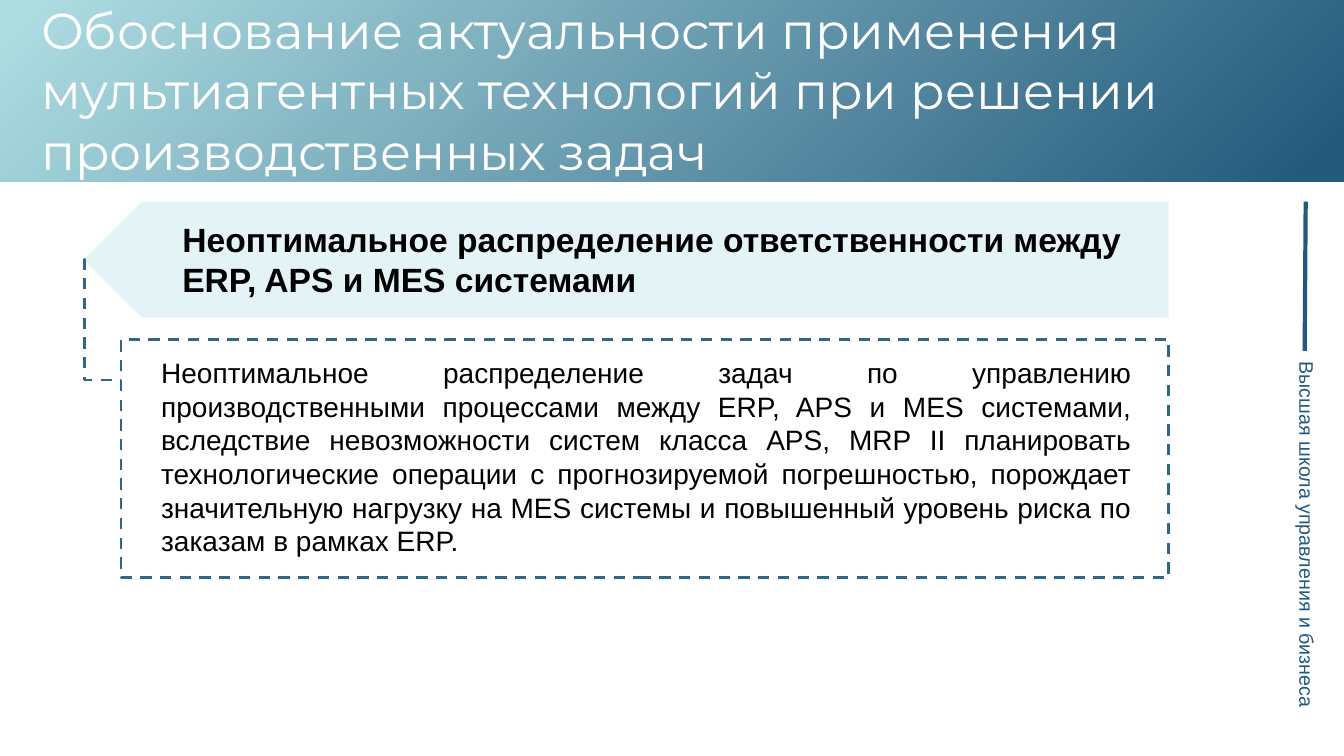
from pptx import Presentation
from pptx.dml.color import RGBColor
from pptx.enum.dml import MSO_LINE
from pptx.enum.shapes import MSO_CONNECTOR, MSO_SHAPE
from pptx.enum.text import MSO_ANCHOR, PP_ALIGN
from pptx.oxml.ns import qn
from pptx.util import Inches, Pt
from lxml.etree import SubElement

NAVY = RGBColor(0x23, 0x59, 0x7B)
BLUE = RGBColor(0x31, 0x66, 0x85)
AQUA = RGBColor(0xAD, 0xDC, 0xE1)
PALE_AQUA = RGBColor(0xAC, 0xDB, 0xE0)
WHITE = RGBColor(0xFF, 0xFF, 0xFF)
BLACK = RGBColor(0, 0, 0)

presentation = Presentation()
presentation.slide_width = Inches(13.33)
presentation.slide_height = Inches(7.5)
slide = presentation.slides.add_slide(presentation.slide_layouts[6])


def add_box(preset, left, top, width, height):
    shape = slide.shapes.add_shape(
        preset, Inches(left), Inches(top), Inches(width), Inches(height))
    shape.shadow.inherit = False
    shape.fill.solid()
    shape.fill.fore_color.rgb = WHITE
    shape.line.fill.background()
    return shape


def write_text(shape, text, size, font, color):
    frame = shape.text_frame
    frame.word_wrap = True
    frame.vertical_anchor = MSO_ANCHOR.TOP
    paragraph = frame.paragraphs[0]
    paragraph.text = text
    paragraph.alignment = PP_ALIGN.LEFT
    paragraph.font.size = Pt(size)
    paragraph.font.name = font
    paragraph.font.color.rgb = color
    return paragraph


banner = add_box(MSO_SHAPE.PENTAGON, 0.83, 2, 10.76, 1.15)
banner.rotation = 180
banner.fill.fore_color.rgb = PALE_AQUA
banner_color = banner.fill._xPr.find(qn("a:solidFill"))[0]
SubElement(banner_color, qn("a:alpha"), val="32000")

frame_box = add_box(MSO_SHAPE.RECTANGLE, 1.2, 3.37, 10.39, 2.36)

header = add_box(MSO_SHAPE.RECTANGLE, 0, 0, 13.33, 1.8)
header.fill.gradient()
header.fill.gradient_angle = 315
for stop, position, color in zip(header.fill.gradient_stops, (0.02, 0.98), (AQUA, NAVY)):
    stop.position = position
    stop.color.rgb = color

side_label = add_box(MSO_SHAPE.RECTANGLE, 11.1, 5.18, 3.72, 0.34)
side_label.rotation = 90
write_text(side_label, "Высшая школа управления и бизнеса", 14, "Arial", NAVY)

text_boxes = [
    (0.31, -0.06, 13.33, 1.92, 36, "Montserrat", WHITE,
     "Обоснование актуальности применения мультиагентных технологий "
     "при решении производственных задач"),
    (1.2, 3.48, 10.12, 2.12, 20, "Arial", BLACK,
     "Неоптимальное распределение задач по управлению производственными "
     "процессами между ERP, APS и MES системами, вследствие невозможности "
     "систем класса APS, MRP II планировать технологические операции с "
     "прогнозируемой погрешностью, порождает значительную нагрузку на MES "
     "системы и повышенный уровень риска по заказам в рамках ERP."),
    (1.71, 2.12, 9.62, 0.91, 24, "Arial", BLACK,
     "Неоптимальное распределение ответственности между ERP, APS и MES системами"),
]
paragraphs = []
for left, top, width, height, size, font, color, text in text_boxes:
    text_box = slide.shapes.add_textbox(
        Inches(left), Inches(top), Inches(width), Inches(height))
    paragraphs.append(write_text(text_box, text, size, font, color))
title, explanation, heading = paragraphs
explanation.alignment = PP_ALIGN.JUSTIFY
explanation_format = explanation._p.get_or_add_pPr()
explanation_format.set("marL", str(Inches(0.3)))
explanation_format.set("indent", "0")
heading.font.bold = True

side_line = slide.shapes.add_connector(
    MSO_CONNECTOR.STRAIGHT, Inches(12.95), Inches(2), Inches(12.94), Inches(3.48))
bracket = slide.shapes.add_connector(
    MSO_CONNECTOR.ELBOW, Inches(0.83), Inches(2.57), Inches(1.2), Inches(3.77))
bracket_geometry = bracket._element.spPr.find(qn("a:prstGeom"))
SubElement(bracket_geometry.find(qn("a:avLst")), qn("a:gd"), name="adj1", fmla="val 1500")

for connector in (side_line, bracket):
    SubElement(connector._element.spPr, qn("a:effectLst"))
for shape, color, width in ((side_line, NAVY, 3), (frame_box, BLUE, 2), (bracket, BLUE, 2)):
    shape.line.color.rgb = color
    shape.line.width = Pt(width)
for shape in (frame_box, bracket):
    shape.line.dash_style = MSO_LINE.DASH

presentation.save("out.pptx")
